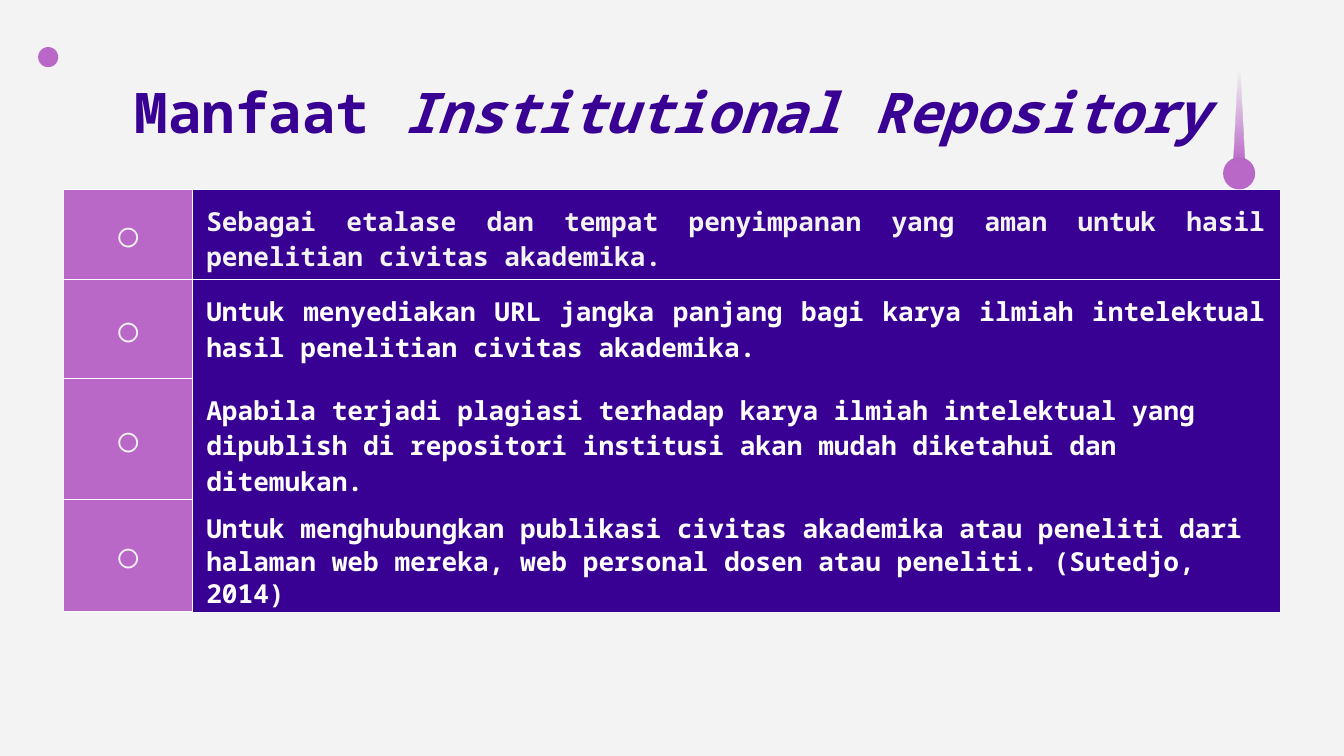
from pptx import Presentation
from pptx.dml.color import RGBColor as RGB
from pptx.enum.shapes import MSO_SHAPE as Kind
from pptx.enum.text import MSO_ANCHOR as Anchor, PP_ALIGN as Align
from pptx.oxml import parse_xml as to_xml
from pptx.oxml.ns import nsdecls
from pptx.util import Pt

FONT = "Noto Sans Mono"
COLORS = {"back": "F3F3F3", "violet": "380093", "orchid": "BA68C8", "white": "FFFFFF"}
PAD = Pt(7.2)
COLS = (69, 582.5)
ROWS = (
    ("Sebagai etalase dan tempat penyimpanan yang aman untuk hasil penelitian civitas akademika.",
     47.5, "back", Align.JUSTIFY, "LTB"),
    ("Untuk menyediakan URL jangka panjang bagi karya ilmiah intelektual hasil penelitian civitas akademika.",
     53.3, "white", Align.JUSTIFY, "LT"),
    ("Apabila terjadi plagiasi terhadap karya ilmiah intelektual yang dipublish di repositori institusi akan mudah diketahui dan ditemukan.",
     53.3, "white", Align.LEFT, "L"),
    ("Untuk menghubungkan publikasi civitas akademika atau peneliti dari halaman web mereka, web personal dosen atau peneliti. (Sutedjo, 2014)",
     53.3, "white", Align.LEFT, "L"),
)


def color(name):
    return RGB.from_string(COLORS[name])


def style(para, size, hue, align):
    para.alignment = align
    font = para.font
    font.name, font.size, font.bold = FONT, Pt(size), True
    font.color.rgb = color(hue)


def pad(box):
    box.margin_left = box.margin_right = PAD
    box.margin_top = box.margin_bottom = PAD


def add_shape(slide, kind, left, top, width, height):
    shape = slide.shapes.add_shape(kind, Pt(left), Pt(top), Pt(width), Pt(height))
    shape.shadow.inherit = False
    shape.line.fill.background()
    shape.fill.solid()
    shape.fill.fore_color.rgb = color("orchid")
    return shape


def fade(shape):
    hue = COLORS["orchid"]
    clear = "".join(
        f'<a:gs pos="{pos}"><a:srgbClr val="{hue}"><a:alpha val="0"/></a:srgbClr></a:gs>'
        for pos in (80000, 100000))
    grad = to_xml(
        f'<a:gradFill {nsdecls("a")}><a:gsLst><a:gs pos="0"><a:srgbClr val="{hue}"/></a:gs>'
        f'{clear}</a:gsLst><a:lin ang="16200000" scaled="0"/></a:gradFill>')
    props = shape.element.spPr
    props.replace(props.find(".//{*}solidFill"), grad)


def add_title(slide):
    box = slide.shapes.add_textbox(Pt(56.2), Pt(42.5), Pt(607.7), Pt(42.5))
    frame = box.text_frame
    frame.word_wrap = True
    frame.vertical_anchor = Anchor.BOTTOM
    pad(frame)
    para = frame.paragraphs[0]
    style(para, 30, "violet", Align.CENTER)
    para.add_run().text = "Manfaat "
    term = para.add_run()
    term.text = "Institutional Repository "
    term.font.italic = True


def set_edges(cell, sides):
    props = cell._tc.get_or_add_tcPr()
    for side in "LRTB":
        paint = (f'<a:solidFill><a:srgbClr val="{COLORS["white"]}"/></a:solidFill>'
                 if side in sides else "<a:noFill/>")
        props.append(to_xml(f'<a:ln{side} {nsdecls("a")} w="{Pt(0.75)}">{paint}</a:ln{side}>'))


def fill_cell(cell, text, size, hue, align, fill, sides):
    set_edges(cell, sides)
    cell.fill.solid()
    cell.fill.fore_color.rgb = color(fill)
    cell.vertical_anchor = Anchor.MIDDLE
    pad(cell)
    cell.text = text
    para = cell.text_frame.paragraphs[0]
    style(para, size, hue, align)
    return para


def add_list(slide):
    frame = slide.shapes.add_table(
        len(ROWS), len(COLS), Pt(34.3), Pt(101.6), Pt(sum(COLS)), Pt(sum(row[1] for row in ROWS)))
    table = frame.table
    table.first_row = table.horz_banding = False
    for col, width in zip(table.columns, COLS):
        col.width = Pt(width)
    for index, (text, height, hue, align, sides) in enumerate(ROWS):
        table.rows[index].height = Pt(height)
        paras = (
            fill_cell(table.cell(index, 0), "○", 24, "back", Align.CENTER, "orchid", "RTB"),
            fill_cell(table.cell(index, 1), text, 14, hue, align, "violet", sides),
        )
    for para in paras:
        para.line_spacing = 0.9
        para.space_before, para.space_after = Pt(12), Pt(2)


def main():
    deck = Presentation()
    deck.slide_width, deck.slide_height = Pt(720), Pt(405)
    slide = deck.slides.add_slide(deck.slide_layouts[6])
    slide.background.fill.solid()
    slide.background.fill.fore_color.rgb = color("back")
    add_shape(slide, Kind.OVAL, 20.4, 25.2, 10.8, 10.8)
    add_title(slide)
    add_list(slide)
    add_shape(slide, Kind.OVAL, 655.2, 84.3, 17.2, 17.2)
    fade(add_shape(slide, Kind.ISOSCELES_TRIANGLE, 660.8, 25.2, 6, 62.6))
    deck.save("out.pptx")


if __name__ == "__main__":
    main()
